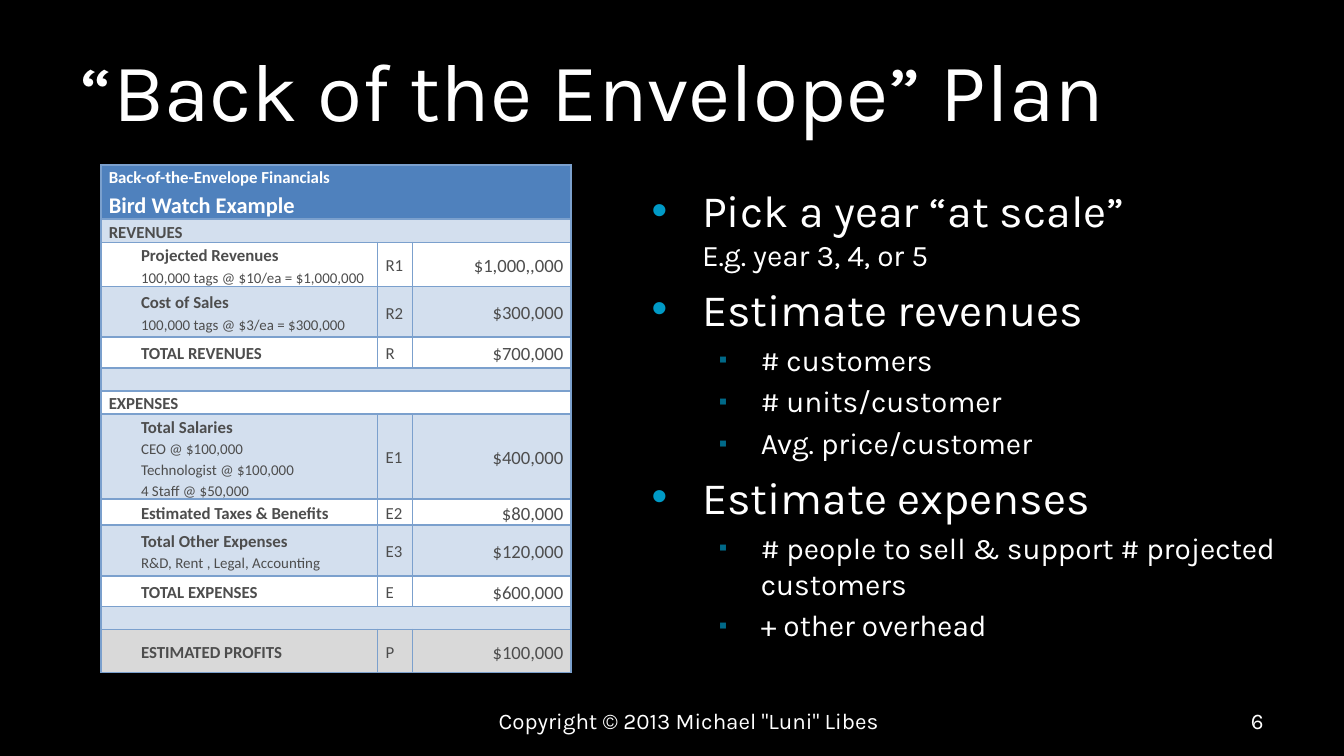
from dataclasses import dataclass

import pptx
from lxml import etree
from pptx.dml.color import RGBColor
from pptx.enum.shapes import MSO_SHAPE
from pptx.enum.text import MSO_ANCHOR, PP_ALIGN
from pptx.oxml.ns import qn
from pptx.util import Pt

BLACK = RGBColor(0x00, 0x00, 0x00)
WHITE = RGBColor(0xFF, 0xFF, 0xFF)
GRAY_TEXT = RGBColor(0x4D, 0x4D, 0x4D)
HEADER_BLUE = RGBColor(0x4F, 0x81, 0xBD)
PALE_BLUE = RGBColor(0xD3, 0xDF, 0xEE)
PROFIT_GRAY = RGBColor(0xD9, 0xD9, 0xD9)
BORDER_BLUE = RGBColor(0x7B, 0xA0, 0xCD)
BULLET_BLUE = RGBColor(0x00, 0x9A, 0xC6)
SUB_BULLET_BLUE = RGBColor(0x00, 0x69, 0x88)

COLUMN_WIDTHS = (148.3, 18.7, 85)


@dataclass(frozen=True)
class Entry:
    """One row of the plan; without a code it is a section or spacer row."""
    height: float
    fill: RGBColor
    label: str = ""
    details: tuple[str, ...] = ()
    code: str = ""
    amount: str = ""


@dataclass(frozen=True)
class Level:
    size: float
    margin: float
    hanging: float
    mark: str
    mark_color: RGBColor
    mark_percent: int


@dataclass(frozen=True)
class Point:
    text: str
    level: Level
    remark: str = ""


ENTRIES = (
    Entry(12.25, PALE_BLUE, "REVENUES"),
    Entry(22.3, WHITE, "Projected Revenues",
          ("100,000 tags @ $10/ea = $1,000,000",), "R1", "$1,000,,000"),
    Entry(27.3, PALE_BLUE, "Cost of Sales",
          ("100,000 tags @ $3/ea = $300,000",), "R2", "$300,000"),
    Entry(16.5, WHITE, "TOTAL REVENUES", (), "R", "$700,000"),
    Entry(12.25, PALE_BLUE),
    Entry(12.25, WHITE, "EXPENSES"),
    Entry(44, PALE_BLUE, "Total Salaries",
          ("CEO @ $100,000", "Technologist @ $100,000", "4 Staff @ $50,000"),
          "E1", "$400,000"),
    Entry(12.25, WHITE, "Estimated Taxes & Benefits", (), "E2", "$80,000"),
    Entry(27.3, PALE_BLUE, "Total Other Expenses",
          ("R&D, Rent , Legal, Accounting",), "E3", "$120,000"),
    Entry(16.5, WHITE, "TOTAL EXPENSES", (), "E", "$600,000"),
    Entry(12.25, PALE_BLUE),
    Entry(23, PROFIT_GRAY, "ESTIMATED PROFITS", (), "P", "$100,000"),
)

MAIN = Level(24, 27, 27, "•", BULLET_BLUE, 100)
SUB = Level(16, 58.5, 22.5, "▪", SUB_BULLET_BLUE, 80)

POINTS = (
    Point("Pick a year “at scale”", MAIN, "E.g. year 3, 4, or 5"),
    Point("Estimate revenues", MAIN),
    Point("# customers", SUB),
    Point("# units/customer", SUB),
    Point("Avg. price/customer", SUB),
    Point("Estimate expenses", MAIN),
    Point("# people to sell & support # projected customers", SUB),
    Point("+ other overhead", SUB),
)


def write(paragraph, text: str, *, size: float, color: RGBColor = WHITE,
          font: str = "Karla", bold: bool = False,
          align: PP_ALIGN = PP_ALIGN.LEFT) -> None:
    paragraph.alignment = align
    run = paragraph.add_run()
    run.text = text
    run.font.size = Pt(size)
    run.font.name = font
    run.font.bold = bold
    run.font.color.rgb = color


def add_text_frame(slide, left: float, top: float, width: float, height: float,
                   anchor: MSO_ANCHOR = MSO_ANCHOR.MIDDLE):
    frame = slide.shapes.add_textbox(
        Pt(left), Pt(top), Pt(width), Pt(height)).text_frame
    frame.word_wrap = True
    frame.vertical_anchor = anchor
    return frame


def next_paragraph(frame, index: int):
    return frame.add_paragraph() if index else frame.paragraphs[0]


def set_bullet(paragraph, level: Level) -> None:
    props = paragraph._p.get_or_add_pPr()
    props.set("marL", str(Pt(level.margin)))
    props.set("indent", str(-Pt(level.hanging)))
    color = etree.SubElement(props, qn("a:buClr"))
    etree.SubElement(color, qn("a:srgbClr"), val=str(level.mark_color))
    etree.SubElement(props, qn("a:buSzPct"), val=str(level.mark_percent * 1000))
    etree.SubElement(props, qn("a:buFont"), typeface="Arial")
    etree.SubElement(props, qn("a:buChar"), char=level.mark)


def style_cell(cell, fill: RGBColor, sides: str = "LRTB") -> None:
    cell.margin_left = cell.margin_right = Pt(4.3)
    cell.margin_top = cell.margin_bottom = Pt(0)
    cell.vertical_anchor = MSO_ANCHOR.MIDDLE
    props = cell._tc.get_or_add_tcPr()
    for side in "LRTB":
        line = etree.SubElement(props, qn(f"a:ln{side}"), w=str(Pt(1)))
        if side in sides:
            solid = etree.SubElement(line, qn("a:solidFill"))
            etree.SubElement(solid, qn("a:srgbClr"), val=str(BORDER_BLUE))
        else:
            etree.SubElement(line, qn("a:noFill"))
    cell.fill.solid()
    cell.fill.fore_color.rgb = fill


def fill_cell(cell, lines: list[tuple[str, float, bool]], *, indent: float = 0,
              color: RGBColor = GRAY_TEXT,
              align: PP_ALIGN = PP_ALIGN.LEFT) -> None:
    for index, (text, size, bold) in enumerate(lines):
        paragraph = next_paragraph(cell.text_frame, index)
        paragraph._p.get_or_add_pPr().set("marL", str(Pt(indent)))
        paragraph.line_spacing = 1.15
        write(paragraph, text, size=size, color=color, font="Calibri",
              bold=bold, align=align)


def add_plan_table(slide) -> None:
    heights = [28.8] + [entry.height for entry in ENTRIES]
    table = slide.shapes.add_table(
        len(heights), len(COLUMN_WIDTHS), Pt(54), Pt(88.4),
        Pt(sum(COLUMN_WIDTHS)), Pt(sum(heights))).table
    table.first_row = table.horz_banding = False
    for column, width in zip(table.columns, COLUMN_WIDTHS):
        column.width = Pt(width)
    for row, height in zip(table.rows, heights):
        row.height = Pt(height)

    # Header across all columns
    for cell in table.rows[0].cells:
        style_cell(cell, HEADER_BLUE)
    table.cell(0, 0).merge(table.cell(0, 2))
    fill_cell(table.cell(0, 0), [("Back-of-the-Envelope Financials", 9, True),
                                 ("Bird Watch Example", 12, True)], color=WHITE)

    # Entries, section headings and spacers
    for row, entry in zip(list(table.rows)[1:], ENTRIES):
        label, code, amount = row.cells
        open_sides = ("LTB", "TB", "RTB")
        for cell, sides in zip(row.cells, open_sides):
            style_cell(cell, entry.fill, "LRTB" if entry.code else sides)
        if entry.label:
            fill_cell(label, [(entry.label, 9, True)]
                      + [(detail, 8, False) for detail in entry.details],
                      indent=17.3 if entry.code else 0)
        if entry.code:
            fill_cell(code, [(entry.code, 9, False)])
            fill_cell(amount, [(entry.amount, 10, False)], align=PP_ALIGN.RIGHT)
        for cell in row.cells:
            if not cell.text:
                etree.SubElement(cell.text_frame.paragraphs[0]._p,
                                 qn("a:endParaRPr"), sz="900")


def add_points(slide) -> None:
    frame = add_text_frame(slide, 342, 94.5, 360, 275.6, MSO_ANCHOR.TOP)
    for index, point in enumerate(POINTS):
        paragraph = next_paragraph(frame, index)
        set_bullet(paragraph, point.level)
        paragraph.space_before = Pt(0.2 * point.level.size if index else 0)
        write(paragraph, point.text, size=point.level.size)
        if point.remark:
            paragraph.add_line_break()
            write(paragraph, point.remark, size=16)


def main() -> None:
    deck = pptx.Presentation()
    deck.slide_width, deck.slide_height = Pt(720), Pt(405)
    slide = deck.slides.add_slide(deck.slide_layouts[6])

    # Black backdrop
    backdrop = slide.shapes.add_shape(
        MSO_SHAPE.RECTANGLE, 0, 0, deck.slide_width, deck.slide_height)
    backdrop.shadow.inherit = False
    backdrop.fill.solid()
    backdrop.fill.fore_color.rgb = BLACK
    backdrop.line.fill.background()

    # Footer
    copyright_line = add_text_frame(slide, 234, 375.4, 270, 21.6)
    write(copyright_line.paragraphs[0], 'Copyright © 2013 Michael "Luni" Libes',
          size=12, align=PP_ALIGN.CENTER)
    page_number = add_text_frame(slide, 516, 375.4, 168, 21.6)
    write(page_number.paragraphs[0], "6", size=12, align=PP_ALIGN.RIGHT)

    # Title and content
    title = add_text_frame(slide, 36, 13.5, 648, 67.5)
    write(title.paragraphs[0], "“Back of the Envelope” Plan", size=44)
    add_points(slide)
    add_plan_table(slide)

    deck.save("out.pptx")


if __name__ == "__main__":
    main()
